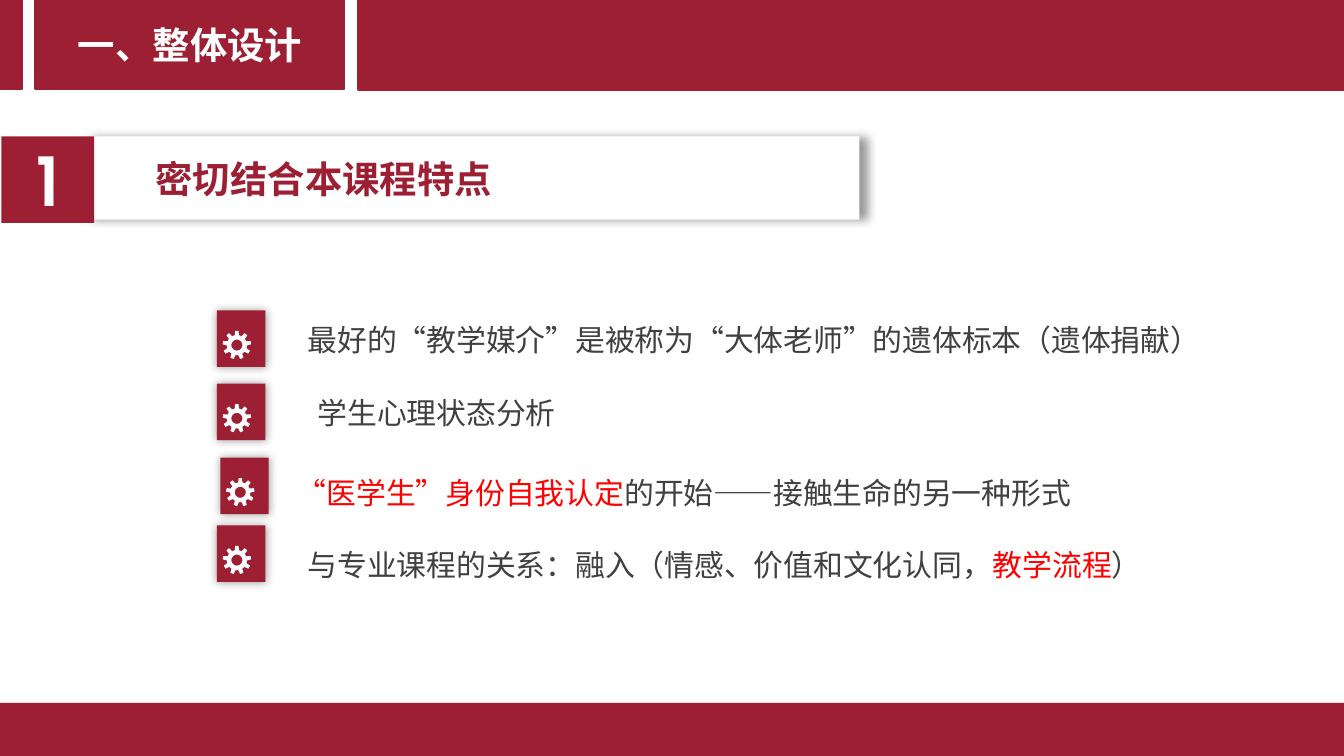
from math import cos, pi, sin
from lxml import etree
from pptx import Presentation
from pptx.dml.color import RGBColor
from pptx.enum.shapes import MSO_SHAPE
from pptx.enum.text import MSO_ANCHOR, MSO_AUTO_SIZE, PP_ALIGN
from pptx.oxml import parse_xml
from pptx.oxml.ns import qn
from pptx.util import Inches, Pt

RECT = MSO_SHAPE.RECTANGLE
MID = MSO_ANCHOR.MIDDLE
GROW = MSO_AUTO_SIZE.SHAPE_TO_FIT_TEXT
LEFT, MIDDLE = PP_ALIGN.LEFT, PP_ALIGN.CENTER
RED, WHITE, GREY, HOT = "9D1F33", "FFFFFF", "404040", "FF0000"
SANS, ROUND = "Noto Sans CJK SC", "TeX Gyre Adventor"
UNIT = Inches(0.1)
WIDE, HIGH = 100, 56.25
SHADE = (
    '<a:effectLst xmlns:a="http://schemas.openxmlformats.org/drawingml/2006/main">'
    '<a:outerShdw blurRad="63500" dist="0" dir="0" sx="101000" algn="l" rotWithShape="0">'
    '<a:srgbClr val="000000"><a:alpha val="40000"/></a:srgbClr>'
    "</a:outerShdw></a:effectLst>"
)

deck = Presentation()
deck.slide_width, deck.slide_height = int(WIDE * UNIT), int(HIGH * UNIT)
slide = deck.slides.add_slide(deck.slide_layouts[6])
shapes = slide.shapes


def box(x, y, w, h, fill=RED, edge=False, shade=False):
    item = shapes.add_shape(RECT, *[int(v * UNIT) for v in (x, y, w, h)])
    item.fill.solid()
    item.fill.fore_color.rgb = RGBColor.from_string(fill)
    if edge:
        item.line.color.rgb = RGBColor.from_string(fill)
        item.line.width = Pt(2)
    else:
        item.line.fill.background()
    item.shadow.inherit = False
    if shade:
        props = item._element.spPr
        props.remove(props.find(qn("a:effectLst")))
        props.append(parse_xml(SHADE))
    return item


def write(item, parts, size, face=SANS, bold=False, align=LEFT):
    para = item.text_frame.paragraphs[0]
    para.alignment = align
    for words, tint in parts:
        run = para.add_run()
        run.text = words
        font = run.font
        font.size, font.bold, font.name = Pt(size), bold, face
        font.color.rgb = RGBColor.from_string(tint)
        etree.SubElement(font._element, qn("a:ea")).set("typeface", face)
    return para


for x, y, w in [(0, 0, 1.6), (2.7, 0, 22.8), (26.7, 0.05, 73.3)]:
    box(x, y, w, 6.6, edge=True)

head = box(6.8, 10.15, 57.15, 6.2, fill=WHITE, shade=True)
head.text_frame.vertical_anchor = MID
para = write(head, [("密切结合本课程特点", RED)], 20, bold=True)
para._p.get_or_add_pPr().set("marL", str(Inches(0.38)))
box(0, 52.3, 100.5, 3.95)

TEETH = 9
STEP = 2 * pi / TEETH
COG = [(0.75, -0.3), (1.06, -0.17), (1.06, 0.17), (0.75, 0.3)]
rim = [
    (r * cos(a), r * sin(a))
    for i in range(TEETH)
    for r, a in [(r, (i + t) * STEP - pi / 2) for r, t in COG]
]
hole = [(0.41 * cos(i * pi / 12), 0.41 * sin(i * pi / 12)) for i in range(24)]

for x, y in [(16.15, 23.1), (16.15, 28.55), (16.4, 34.05), (16.15, 39.1)]:
    box(x, y, 3.6, 4.2, shade=True)
    mx, my = x + 1.48, y + 2.58
    rings = [[((mx + a) * UNIT, (my + b) * UNIT) for a, b in r] for r in (rim, hole)]
    path = shapes.build_freeform(*rings[0][0])
    path.add_line_segments(rings[0][1:], close=True)
    path.move_to(*rings[1][0])
    path.add_line_segments(rings[1][1:], close=True)
    gear = path.convert_to_shape()
    gear.fill.solid()
    gear.fill.fore_color.rgb = RGBColor.from_string(WHITE)
    gear.line.fill.background()
    gear.shadow.inherit = False

title = box(2.75, 0, 22.8, 6.6, edge=True)
title.text_frame.vertical_anchor = MID
write(title, [("一、整体设计", WHITE)], 20, bold=True, align=MIDDLE)

ITEMS = [
    (21.9, 23.45, 68.9, 3.7, True, 1,
     [("最好的“教学媒介”是被称为“大体老师”的遗体标本（遗体捐献）", GREY)]),
    (22.65, 28.9, 19.8, 3.7, False, 1, [("学生心理状态分析", GREY)]),
    (21.1, 32.2, 60.1, 6.4, False, 2,
     [("“医学生”身份自我认定", HOT), ("的开始——接触生命的另一种形式", GREY)]),
    (21.9, 37.55, 64.2, 6.4, True, 2,
     [("与专业课程的关系：融入（情感、价值和文化认同，", GREY),
      ("教学流程", HOT), ("）", GREY)]),
]
for x, y, w, h, wrap, gap, parts in ITEMS:
    note = shapes.add_textbox(*[int(v * UNIT) for v in (x, y, w, h)])
    note.text_frame.word_wrap = wrap
    note.text_frame.auto_size = GROW
    para = write(note, parts, 16)
    if gap > 1:
        para.line_spacing = float(gap)
        props = para._p.get_or_add_pPr()
        props.set("marL", str(Inches(0.31)))
        props.set("indent", str(-Inches(0.31)))

mark = box(0.1, 10.15, 6.9, 6.45)
mark.text_frame.vertical_anchor = MID
write(mark, [("1", WHITE)], 36, face=ROUND, bold=True, align=MIDDLE)

deck.save("out.pptx")
